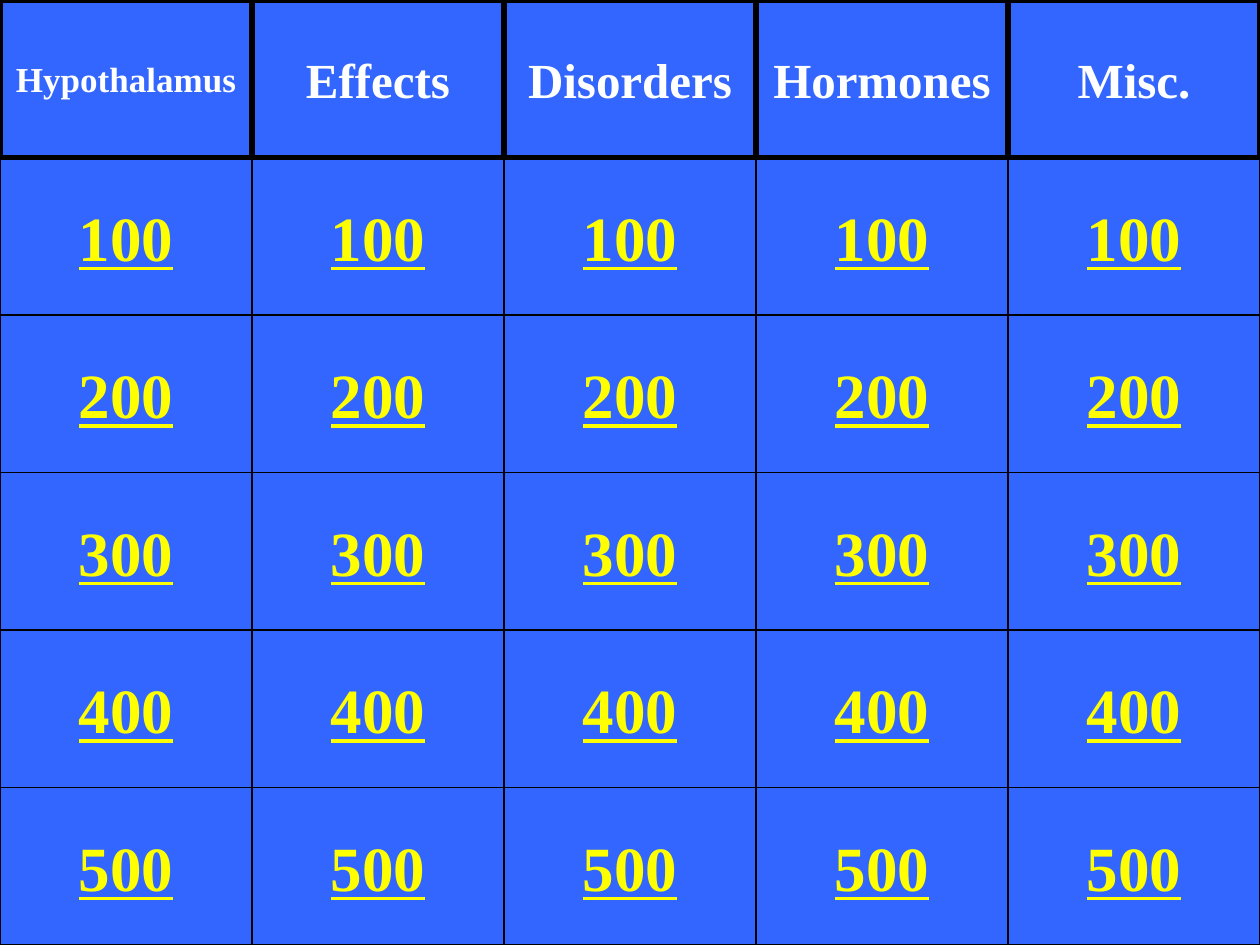
from pptx import Presentation
from pptx import util as u
from pptx.dml.color import RGBColor
from pptx.enum import shapes, text

BLUE, BLACK, WHITE, YELLOW = "3366FF", "000000", "FFFFFF", "FFFF00"
CATEGORIES = ["Hypothalamus", "Effects", "Disorders", "Hormones", "Misc."]
POINTS = [100, 200, 300, 400, 500]
CELL_W, CELL_H = 2, 1.25


def paint(color_format, color):
    color_format.rgb = RGBColor.from_string(color)


def add_cell(col, row, kind, label, size, color, line_width):
    """Add one board cell and return its paragraph."""
    sp = s.shapes.add_shape(kind, u.Inches(col * CELL_W), u.Inches(row * CELL_H),
                            u.Inches(CELL_W), u.Inches(CELL_H))
    sp.shadow.inherit = False
    sp.fill.solid()
    paint(sp.fill.fore_color, BLUE)
    paint(sp.line.color, BLACK)
    sp.line.width = u.Pt(line_width)
    tf = sp.text_frame
    tf.word_wrap = False
    tf.vertical_anchor = text.MSO_ANCHOR.MIDDLE
    p = tf.paragraphs[0]
    p.text = label
    p.alignment = text.PP_ALIGN.CENTER
    p.font.name = "Times New Roman"
    p.font.size = u.Pt(size)
    p.font.bold = True
    paint(p.font.color, color)
    return p


prs = Presentation()
prs.slide_width, prs.slide_height = u.Inches(10), u.Inches(7.5)
s = prs.slides.add_slide(prs.slide_layouts[6])
s.background.fill.solid()
paint(s.background.fill.fore_color, BLUE)

for col in range(len(CATEGORIES)):
    for row, points in enumerate(POINTS, start=1):
        p = add_cell(col, row, shapes.MSO_SHAPE.ACTION_BUTTON_CUSTOM,
                     str(points), 36, YELLOW, 0.75)
        p.font.underline = True

# The headers come last so that their thick borders lie over the buttons
for col, category in enumerate(CATEGORIES):
    size = 20 if category == "Hypothalamus" else 28
    add_cell(col, 0, shapes.MSO_SHAPE.RECTANGLE, category, size, WHITE, 3)

prs.save("out.pptx")
